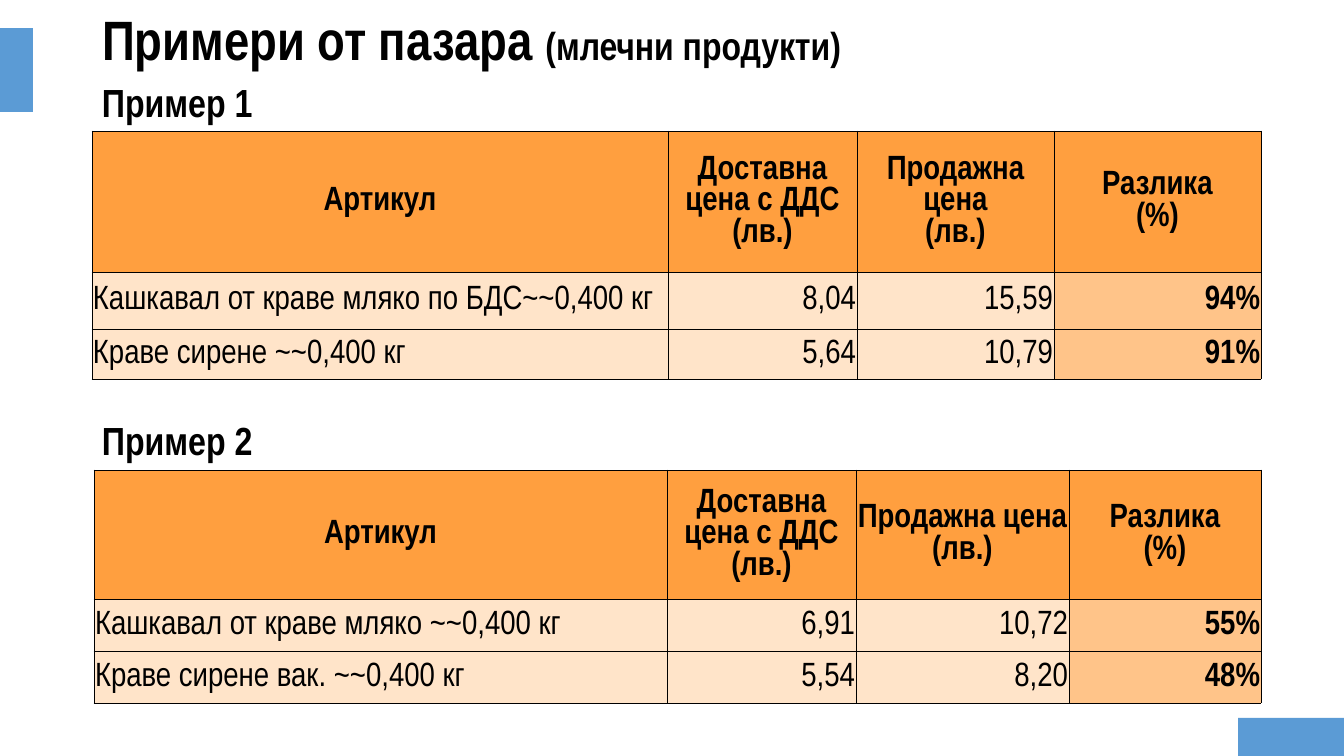
from lxml.etree import SubElement
from pptx import Presentation
from pptx.dml.color import RGBColor
from pptx.enum.shapes import MSO_SHAPE
from pptx.enum.text import MSO_ANCHOR, MSO_AUTO_SIZE, PP_ALIGN
from pptx.oxml.ns import qn
from pptx.util import Pt

SCALE = 12192000 / 1344
FONT = "Arial Narrow"
COLORS = {"text": "000000", "accent": "5B9BD5", "header": "FF9F3F",
          "body": "FFE4C9", "diff": "FFC489"}
HEADER = ["Артикул", "Доставна цена с ДДС\n(лв.)", "Продажна цена\n(лв.)", "Разлика\n(%)"]
EXAMPLES = [
    {"label": "Пример 1", "label_box": (92, 79, 271, 51), "spacing": 0.8,
     "at": (92, 131), "cols": [576, 189, 197, 207], "rows": [141, 57, 50],
     "items": [["Кашкавал от краве мляко по БДС~~0,400 кг", "8,04", "15,59", "94%"],
               ["Краве сирене ~~0,400 кг", "5,64", "10,79", "91%"]]},
    {"label": "Пример 2", "label_box": (92, 411, 271, 58), "spacing": 0.9,
     "at": (94, 470), "cols": [573, 189, 213, 192], "rows": [129, 52, 52],
     "items": [["Кашкавал от краве мляко ~~0,400 кг", "6,91", "10,72", "55%"],
               ["Краве сирене вак. ~~0,400 кг", "5,54", "8,20", "48%"]]},
]


def px(n):
    return round(n * SCALE)


def rgb(name):
    return RGBColor.from_string(COLORS[name])


def add_run(p, text, size, bold=True):
    for i, line in enumerate(text.split("\n")):
        if i:
            p.add_line_break()
        r = p.add_run()
        r.text = line
        r.font.name = FONT
        r.font.size = Pt(size)
        r.font.bold = bold
        r.font.color.rgb = rgb("text")


def add_bar(s, x, y, w, h):
    sp = s.shapes.add_shape(MSO_SHAPE.RECTANGLE, px(x), px(y), px(w), px(h))
    sp.shadow.inherit = False
    sp.fill.solid()
    sp.fill.fore_color.rgb = rgb("accent")
    sp.line.fill.background()


def set_title(s, x, y, w, h, runs):
    sp = s.shapes.title
    sp.left, sp.top, sp.width, sp.height = px(x), px(y), px(w), px(h)
    tf = sp.text_frame
    tf.auto_size = MSO_AUTO_SIZE.NONE
    tf.vertical_anchor = MSO_ANCHOR.MIDDLE
    p = tf.paragraphs[0]
    p.alignment = PP_ALIGN.LEFT
    p.line_spacing = 0.9
    for text, size in runs:
        add_run(p, text, size)


def add_label(s, box, text, spacing):
    tf = s.shapes.add_textbox(*map(px, box)).text_frame
    tf.word_wrap = True
    tf.vertical_anchor = MSO_ANCHOR.BOTTOM
    p = tf.paragraphs[0]
    p.line_spacing = spacing
    p.space_after = Pt(6)
    add_run(p, text, 28)


def add_borders(cell):
    tc_pr = cell._tc.get_or_add_tcPr()
    for i, side in enumerate(("lnL", "lnR", "lnT", "lnB")):
        ln = SubElement(tc_pr, qn(f"a:{side}"), w=str(Pt(0.5)))
        fill = SubElement(ln, qn("a:solidFill"))
        SubElement(fill, qn("a:srgbClr"), val=COLORS["text"])
        tc_pr.insert(i, ln)


def fill_cell(cell, text, color, align, bold):
    cell.margin_left = cell.margin_right = cell.margin_top = px(1)
    cell.margin_bottom = 0
    cell.vertical_anchor = MSO_ANCHOR.MIDDLE
    cell.fill.solid()
    cell.fill.fore_color.rgb = rgb(color)
    add_borders(cell)
    p = cell.text_frame.paragraphs[0]
    p.alignment = align
    add_run(p, text, 24, bold)


def add_price_table(s, at, cols, rows, items):
    x, y = at
    table = s.shapes.add_table(len(rows), len(cols), px(x), px(y),
                               px(sum(cols)), px(sum(rows))).table
    for col, width in zip(table.columns, cols):
        col.width = px(width)
    for row, height in zip(table.rows, rows):
        row.height = px(height)
    last = len(cols) - 1
    for i, values in enumerate([HEADER] + items):
        for j, text in enumerate(values):
            if i == 0:
                style = "header", PP_ALIGN.CENTER, True
            else:
                style = ("diff" if j == last else "body",
                         PP_ALIGN.RIGHT if j else PP_ALIGN.LEFT, j == last)
            fill_cell(table.cell(i, j), text, *style)


def main():
    """Build the slide with two price comparison tables."""
    prs = Presentation()
    prs.slide_width, prs.slide_height = px(1344), px(756)
    s = prs.slides.add_slide(prs.slide_layouts[5])
    add_bar(s, 1238, 718, 106, 38)
    add_bar(s, 0, 28, 33, 84)
    set_title(s, 92, 15, 1095, 55,
              [("Примери от пазара ", 39.6), ("(млечни продукти)", 27.9)])
    for ex in EXAMPLES:
        add_label(s, ex["label_box"], ex["label"], ex["spacing"])
        add_price_table(s, ex["at"], ex["cols"], ex["rows"], ex["items"])
    prs.save("out.pptx")


if __name__ == "__main__":
    main()
